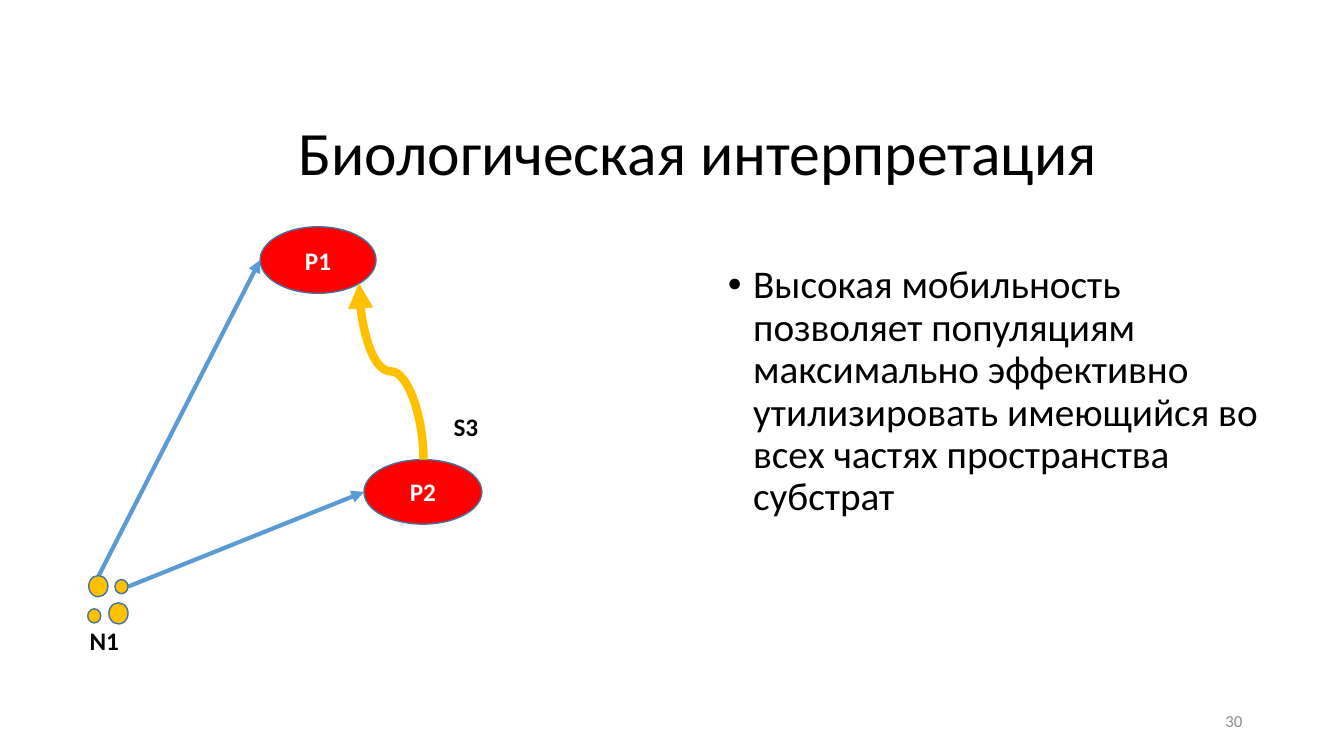
"""Builds the slide on the biological interpretation of population mobility."""
from dataclasses import dataclass

from lxml import etree
from pptx import Presentation
from pptx.dml.color import RGBColor
from pptx.enum import shapes, text
from pptx.oxml import ns
from pptx.util import Inches, Pt

TITLE = "Биологическая интерпретация"
BODY = ("Высокая мобильность позволяет популяциям максимально эффективно "
        "утилизировать имеющийся во всех частях пространства субстрат")
TITLE_BOX = (2.86, 0.84, 9.73, 1.41)
BODY_BOX = (7.12, 2.58, 5.46, 4)
POPULATIONS = [("P1", (2.58, 2.25, 1.15, 0.66)), ("P2", (3.61, 4.56, 1.17, 0.64))]
LARGE, SMALL = (0.19, 0.21), (0.13, 0.14)
SUBSTRATE = [(0.88, 5.71, *LARGE), (1.08, 5.98, *LARGE),
             (1.14, 5.75, *SMALL), (0.87, 6.04, *SMALL)]
FEEDING = [((0.98, 5.71), (2.58, 2.58)), ((1.27, 5.82), (3.61, 4.88))]
MIGRATION = ((4.2, 4.56), (3.56, 2.81))
LABELS = [("S3", (4.4, 4.03, 0.48, 0.4)), ("N1", (0.79, 6.15, 0.53, 0.4))]
NUMBER, NUMBER_BOX = "30", (9.42, 6.95, 3, 0.4)


@dataclass(frozen=True)
class Theme:
    font: str = "Calibri"
    ink: str = "000000"
    light: str = "FFFFFF"
    muted: str = "8C8C8C"
    population: str = "FF0000"
    substrate: str = "FFC000"
    outline: str = "43739E"
    arrow: str = "5B9BD5"
    title_pt: int = 44
    body_pt: int = 28
    label_pt: int = 18
    number_pt: int = 12


T = Theme()


def rgb(value):
    return RGBColor.from_string(value)


def inches(box):
    return [Inches(v) for v in box]


def write(sp, content, size, color, align=text.PP_ALIGN.LEFT, bold=False,
          anchor=text.MSO_ANCHOR.TOP, wrap=True):
    tf = sp.text_frame
    tf.word_wrap = wrap
    tf.auto_size = text.MSO_AUTO_SIZE.NONE
    tf.vertical_anchor = anchor
    p = tf.paragraphs[0]
    p.alignment = align
    r = p.add_run()
    r.text = content
    r.font.name, r.font.size, r.font.bold = T.font, Pt(size), bold
    r.font.color.rgb = rgb(color)
    return p


def place(sp, box):
    sp.left, sp.top, sp.width, sp.height = inches(box)


def add_ellipse(s, box, fill):
    sp = s.shapes.add_shape(shapes.MSO_SHAPE.OVAL, *inches(box))
    sp.shadow.inherit = False
    sp.fill.solid()
    sp.fill.fore_color.rgb = rgb(fill)
    sp.line.color.rgb = rgb(T.outline)
    sp.line.width = Pt(1)
    return sp


def add_arrow(s, kind, start, end, color, width):
    c = s.shapes.add_connector(kind, *inches(start + end))
    c.line.color.rgb = rgb(color)
    c.line.width = Pt(width)
    ln = c.line._get_or_add_ln()
    etree.SubElement(ln, ns.qn("a:tailEnd"), type="triangle")
    etree.SubElement(c._element.spPr, ns.qn("a:effectLst"))
    return c


def add_upward_curve(s, start, end, color, width):
    (x1, y1), (x2, y2) = start, end
    cx, cy = (x1 + x2) / 2, (y1 + y2) / 2
    half_length, half_width = (y1 - y2) / 2, (x1 - x2) / 2
    c = add_arrow(s, shapes.MSO_CONNECTOR.CURVE,
                  (cx - half_length, cy + half_width),
                  (cx + half_length, cy - half_width), color, width)
    c._element.spPr.find(ns.qn("a:xfrm")).set("rot", str(270 * 60000))


def add_bullet(p):
    pPr = p._p.get_or_add_pPr()
    pPr.set("marL", str(Inches(0.25)))
    pPr.set("indent", str(Inches(-0.25)))
    etree.SubElement(pPr, ns.qn("a:buFont"), typeface="Arial")
    etree.SubElement(pPr, ns.qn("a:buChar"), char="•")


def main():
    prs = Presentation()
    prs.slide_width, prs.slide_height = Inches(13.33), Inches(7.5)
    s = prs.slides.add_slide(prs.slide_layouts[1])
    middle, center = text.MSO_ANCHOR.MIDDLE, text.PP_ALIGN.CENTER

    title, body = s.placeholders
    place(title, TITLE_BOX)
    p = write(title, TITLE, T.title_pt, T.ink, anchor=middle)
    p.line_spacing = 0.9
    place(body, BODY_BOX)
    p = write(body, BODY, T.body_pt, T.ink)
    p.line_spacing, p.space_before = 0.9, Pt(0)
    add_bullet(p)

    for name, box in POPULATIONS:
        sp = add_ellipse(s, box, T.population)
        write(sp, name, T.label_pt, T.light, center, True, middle)
    for start, end in FEEDING:
        add_arrow(s, shapes.MSO_CONNECTOR.STRAIGHT, start, end, T.arrow, 3)
    add_upward_curve(s, *MIGRATION, T.substrate, 6)
    for box in SUBSTRATE:
        add_ellipse(s, box, T.substrate)
    for name, box in LABELS:
        sp = s.shapes.add_textbox(*inches(box))
        write(sp, name, T.label_pt, T.ink, bold=True, wrap=False)

    sp = s.shapes.add_textbox(*inches(NUMBER_BOX))
    write(sp, NUMBER, T.number_pt, T.muted, text.PP_ALIGN.RIGHT, anchor=middle)
    prs.save("out.pptx")


if __name__ == "__main__":
    main()
